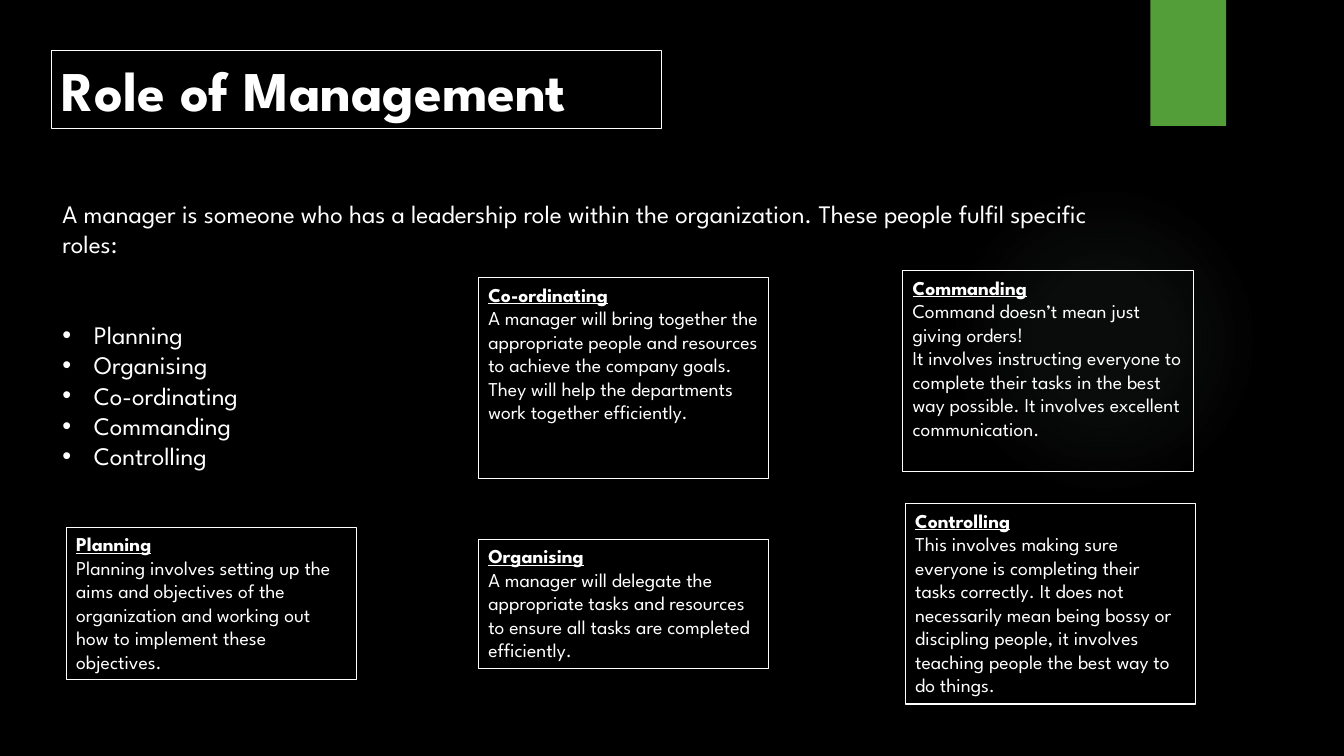
from lxml.etree import SubElement
from pptx import Presentation
from pptx.dml.color import RGBColor
from pptx.enum.shapes import MSO_SHAPE
from pptx.enum.text import MSO_ANCHOR, MSO_AUTO_SIZE, PP_ALIGN
from pptx.oxml import parse_xml
from pptx.oxml.ns import nsdecls, qn
from pptx.util import Pt

BLACK, WHITE, GREEN, GLOW = "000000", "FFFFFF", "549E39", "87A896"


def color(value):
    return RGBColor.from_string(value)


class SlideBuilder:
    """Holds the text style and the current slide."""

    text_style = {"name": "League Spartan", "bold": False, "underline": False}
    frame_format = {
        "word_wrap": True,
        "auto_size": MSO_AUTO_SIZE.NONE,
        "vertical_anchor": MSO_ANCHOR.TOP,
    }

    def __init__(self, page):
        self.page = page
        page.background.fill.solid()
        page.background.fill.fore_color.rgb = color(BLACK)

    def place(self, shape, left, top, width, height):
        bounds = {"left": left, "top": top, "width": width, "height": height}
        for name, value in bounds.items():
            setattr(shape, name, Pt(value))

    def outline(self, shape):
        shape.fill.background()
        shape.line.color.rgb = color(WHITE)
        shape.line.width = Pt(0.75)

    def frame(self, shape):
        for name, value in self.frame_format.items():
            setattr(shape.text_frame, name, value)
        return shape.text_frame

    def add_text(self, para, text, size, **changes):
        para.alignment = PP_ALIGN.LEFT
        para.space_before = Pt(0)
        span = para.add_run()
        span.text = text
        for name, value in {**self.text_style, "size": Pt(size), **changes}.items():
            setattr(span.font, name, value)
        span.font.color.rgb = color(WHITE)

    def bullet(self, para, indent=0):
        properties = para._p.get_or_add_pPr()
        properties.set("marL", str(Pt(indent)))
        properties.set("indent", str(-Pt(indent)))
        if indent:
            SubElement(properties, qn("a:buFont"), typeface="Arial")
            SubElement(properties, qn("a:buChar"), char="•")
        else:
            SubElement(properties, qn("a:buNone"))

    def backdrop(self, kind, *bounds):
        shape = self.page.shapes.add_shape(kind, *map(Pt, bounds))
        shape.shadow.inherit = False
        shape.line.fill.background()
        tree = shape._element.getparent()
        tree.insert(2, shape._element)
        return shape

    def block(self, fill, *bounds):
        shape = self.backdrop(MSO_SHAPE.RECTANGLE, *bounds)
        shape.fill.solid()
        shape.fill.fore_color.rgb = color(fill)

    def glow(self, fill, stops, *bounds):
        shape = self.backdrop(MSO_SHAPE.OVAL, *bounds)
        marks = "".join(
            f'<a:gs pos="{position * 1000}"><a:srgbClr val="{fill}">'
            f'<a:alpha val="{alpha * 1000}"/></a:srgbClr></a:gs>'
            for position, alpha in stops
        )
        gradient = parse_xml(
            f'<a:gradFill {nsdecls("a")} rotWithShape="1"><a:gsLst>{marks}</a:gsLst>'
            '<a:path path="circle"><a:fillToRect l="50000" t="50000" r="50000" b="50000"/>'
            "</a:path></a:gradFill>"
        )
        shape._element.spPr.insert(2, gradient)

    def title(self, text, *bounds):
        shape = self.page.shapes.title
        self.place(shape, *bounds)
        self.outline(shape)
        self.add_text(self.frame(shape).paragraphs[0], text, 40, bold=True)

    def body(self, intro, items, gap, *bounds):
        shape = self.page.placeholders[1]
        self.place(shape, *bounds)
        frame = self.frame(shape)
        para = frame.paragraphs[0]
        self.bullet(para)
        self.add_text(para, intro, 18)
        for index, item in enumerate(items):
            para = frame.add_paragraph()
            self.bullet(para, 22.5)
            self.add_text(para, item, 18)
            if index == 0:
                para.space_before = Pt(gap)

    def card(self, heading, sentences, *bounds):
        box = self.page.shapes.add_shape(MSO_SHAPE.RECTANGLE, *map(Pt, bounds))
        box.shadow.inherit = False
        self.outline(box)
        frame = self.frame(box)
        self.add_text(frame.paragraphs[0], heading, 14, bold=True, underline=True)
        for sentence in sentences:
            self.add_text(frame.add_paragraph(), sentence, 14)


def main():
    deck = Presentation()
    deck.slide_width, deck.slide_height = Pt(960), Pt(540)
    builder = SlideBuilder(deck.slides.add_slide(deck.slide_layouts[1]))

    # Background decoration
    builder.block(GREEN, 821.8, 0, 54, 90)
    builder.glow(GLOW, [(0, 7), (36, 6), (69, 0), (100, 0)], 677.5, 131.8, 221.8, 221.8)

    # Title and list of roles
    builder.title("Role of Management", 37, 36, 435.6, 55.7)
    builder.body(
        "A manager is someone who has a leadership role within the organization. "
        "These people fulfil specific roles:",
        ["Planning", "Organising", "Co-ordinating", "Commanding", "Controlling"],
        43.2, 37.4, 138.2, 783.4, 225.4,
    )

    # One card for each role: heading, sentences, left, top, height
    card_width = 207.4
    cards = [
        ("Planning",
         ["Planning involves setting up the aims and objectives of the organization "
          "and working out how to implement these objectives."],
         47.3, 376.6, 109),
        ("Organising",
         ["A manager will delegate the appropriate tasks and resources to ensure all "
          "tasks are completed efficiently."],
         341.7, 385.2, 92.2),
        ("Co-ordinating",
         ["A manager will bring together the appropriate people and resources to achieve "
          "the company goals. They will help the departments work together efficiently."],
         341.7, 198.4, 143.3),
        ("Commanding",
         ["Command doesn’t mean just giving orders!",
          "It involves instructing everyone to complete their tasks in the best way "
          "possible. It involves excellent communication."],
         644.8, 193.3, 143.3),
        ("Controlling",
         ["This involves making sure everyone is completing their tasks correctly. It "
          "does not necessarily mean being bossy or discipling people, it involves "
          "teaching people the best way to do things."],
         646.6, 359.6, 143.3),
    ]
    for heading, sentences, left, top, height in cards:
        builder.card(heading, sentences, left, top, card_width, height)

    deck.save("out.pptx")


if __name__ == "__main__":
    main()
